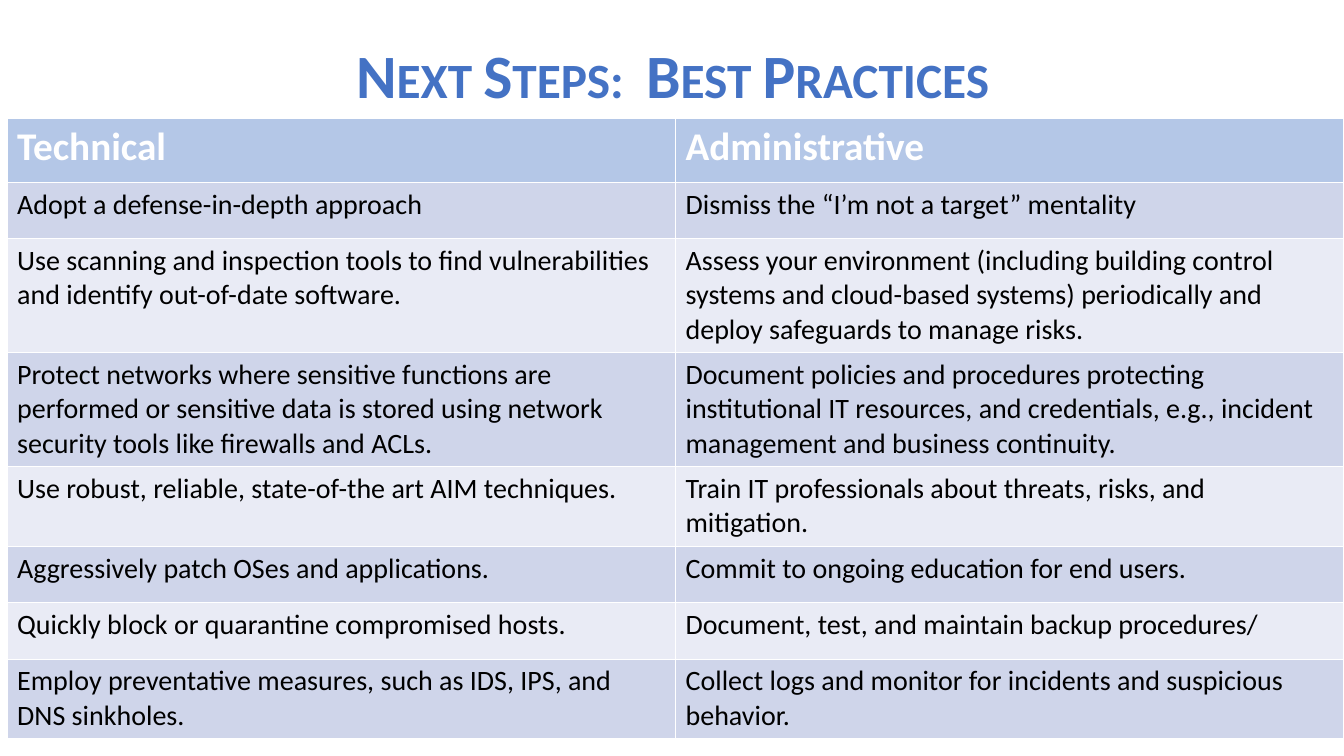
import pptx
import pptx.util
import pptx.dml.color
import pptx.enum.text

TITLE = "Next Steps:  Best Practices"
HEADER = ("Technical", "Administrative")
PRACTICES = [
    ("Adopt a defense-in-depth approach",
     "Dismiss the “I’m not a target” mentality"),
    ("Use scanning and inspection tools to find vulnerabilities and identify "
     "out-of-date software.",
     "Assess your environment (including building control systems and "
     "cloud-based systems) periodically and deploy safeguards to manage risks."),
    ("Protect networks where sensitive functions are performed or sensitive "
     "data is stored using network security tools like firewalls and ACLs.",
     "Document policies and procedures protecting institutional IT resources, "
     "and credentials, e.g., incident management and business continuity."),
    ("Use robust, reliable, state-of-the art AIM techniques.",
     "Train IT professionals about threats, risks, and mitigation."),
    ("Aggressively patch OSes and applications.",
     "Commit to ongoing education for end users."),
    ("Quickly block or quarantine compromised hosts.",
     "Document, test, and maintain backup procedures/"),
    ("Employ preventative measures, such as IDS, IPS, and DNS sinkholes.",
     "Collect logs and monitor for incidents and suspicious behavior."),
]
COLORS = {"title": "4472C4", "header": "B4C7E7", "header_text": "FFFFFF",
          "odd": "CFD5EA", "even": "E9EBF5", "text": "000000"}
FONT = "Calibri"

# Lengths in px, 100 px to the inch
PX = 9144
SLIDE = (1333, 750)
TITLE_BOX = (92, 5, 1150, 145)
TABLE_AT = (7, 117)
COL_WIDTH = 663
ROW_HEIGHTS = (64, 56, 113, 113, 79, 56, 56, 79)


def px(*lengths):
    return [pptx.util.Emu(n * PX) for n in lengths]


def rgb(name):
    return pptx.dml.color.RGBColor.from_string(COLORS[name])


def style(p, size, color, bold):
    p.font.name = FONT
    p.font.size = pptx.util.Pt(size)
    p.font.bold = bold
    p.font.color.rgb = rgb(color)


prs = pptx.Presentation()
prs.slide_width, prs.slide_height = px(*SLIDE)
slide = prs.slides.add_slide(prs.slide_layouts[5])

# Title in small capitals
title = slide.shapes.title
title.left, title.top, title.width, title.height = px(*TITLE_BOX)
tf = title.text_frame
tf.vertical_anchor = pptx.enum.text.MSO_ANCHOR.MIDDLE
p = tf.paragraphs[0]
p.alignment = pptx.enum.text.PP_ALIGN.CENTER
p.line_spacing = 0.9
r = p.add_run()
r.text = TITLE
r.font._element.set("cap", "small")
style(p, 44, "title", True)

# Table of practices
rows = [HEADER] + PRACTICES
table = slide.shapes.add_table(
    len(rows), len(HEADER),
    *px(*TABLE_AT, COL_WIDTH * len(HEADER), sum(ROW_HEIGHTS))).table
for column in table.columns:
    column.width = px(COL_WIDTH)[0]
for i, (texts, height) in enumerate(zip(rows, ROW_HEIGHTS)):
    table.rows[i].height = px(height)[0]
    band = "header" if i == 0 else "odd" if i % 2 else "even"
    for j, text in enumerate(texts):
        cell = table.cell(i, j)
        cell.text = text
        cell.fill.solid()
        cell.fill.fore_color.rgb = rgb(band)
        p = cell.text_frame.paragraphs[0]
        if i == 0:
            style(p, 28, "header_text", True)
        else:
            style(p, 20, "text", False)

prs.save("out.pptx")
